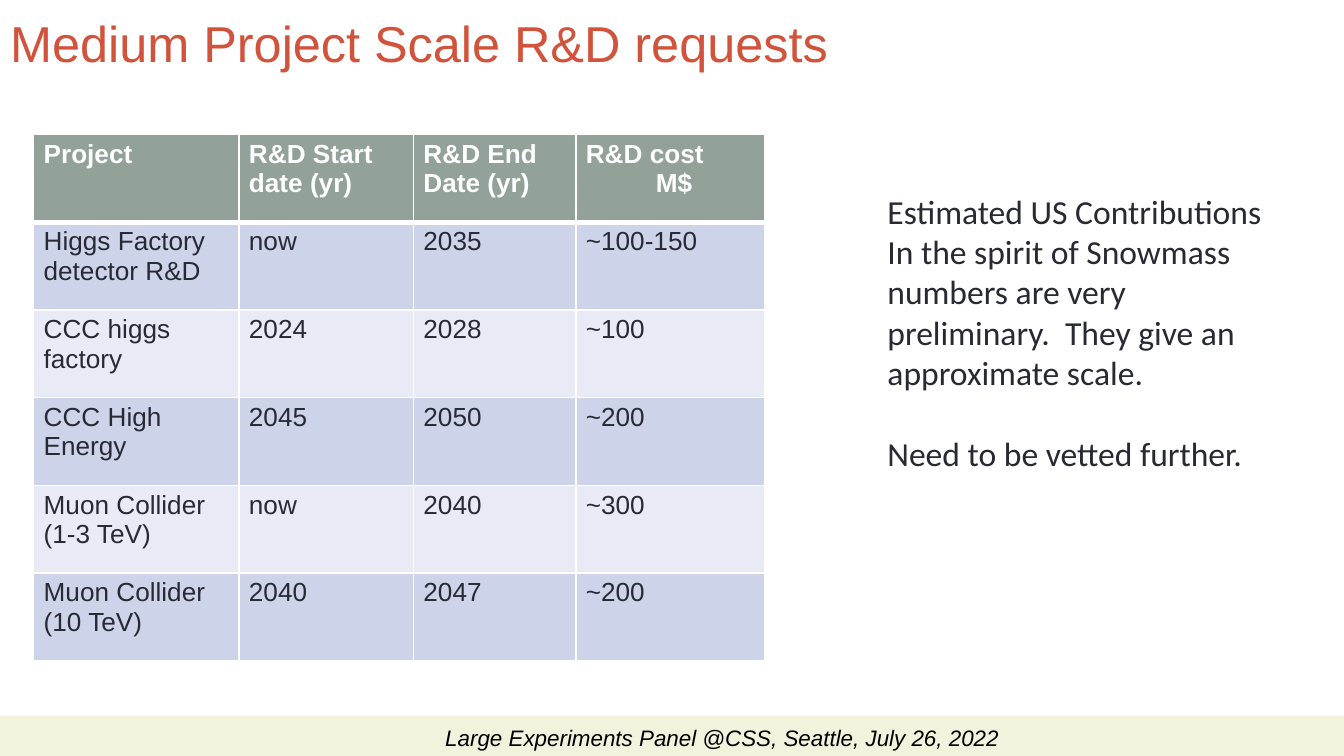
from pptx import Presentation
from pptx.dml.color import RGBColor
from pptx.enum.shapes import MSO_SHAPE
from pptx.enum.text import MSO_ANCHOR, MSO_AUTO_SIZE, PP_ALIGN
from pptx.oxml import parse_xml
from pptx.oxml.ns import nsdecls
from pptx.util import Pt

COLORS = {
    "title": "D2533C",
    "text": "292934",
    "white": "FFFFFF",
    "black": "000000",
    "header": "93A299",
    "band_dark": "CDD4EA",
    "band_light": "E8EBF5",
    "footer": "F3F2DC",
}
COLUMN_WIDTHS = [110, 93.5, 87, 101.5]
ROW_HEIGHT = 47
PROJECTS = [
    ["Project", "R&D Start date (yr)", "R&D End\nDate (yr)", "R&D cost\n M$"],
    ["Higgs Factory detector R&D", "now", "2035", "~100-150"],
    ["CCC higgs factory", "2024", "2028", "~100"],
    ["CCC High Energy", "2045", "2050", "~200"],
    ["Muon Collider\n(1-3 TeV)", "now", "2040", "~300"],
    ["Muon Collider\n(10 TeV)", "2040", "2047", "~200"],
]
NOTES = [
    "Estimated US Contributions",
    "In the spirit of Snowmass numbers are very preliminary.  "
    "They give an approximate scale.",
    "Need to be vetted further.",
]


def rgb(name):
    return RGBColor.from_string(COLORS[name])


class SlideBuilder:
    def __init__(self, s, font="Arial"):
        self.s = s
        self.font = font

    def set_text(self, tf, text, size, color, font=None, bold=False, italic=False,
                 align=PP_ALIGN.LEFT):
        tf.text = text
        for p in tf.paragraphs:
            p.alignment = align
            f = p.font
            f.name, f.size = font or self.font, Pt(size)
            f.bold, f.italic = bold, italic
            f.color.rgb = rgb(color)

    def set_margins(self, tf, x, y):
        tf.margin_left = tf.margin_right = Pt(x)
        tf.margin_top = tf.margin_bottom = Pt(y)

    def title(self, text, x, y, w, h):
        sp = self.s.shapes.title
        sp.left, sp.top, sp.width, sp.height = Pt(x), Pt(y), Pt(w), Pt(h)
        tf = sp.text_frame
        tf.auto_size = MSO_AUTO_SIZE.NONE
        tf.vertical_anchor = MSO_ANCHOR.MIDDLE
        self.set_margins(tf, 5.4, 2.7)
        self.set_text(tf, text, 27, "title")
        tf.paragraphs[0].line_spacing = 0.9

    def bar(self, x, y, w, h, color):
        sp = self.s.shapes.add_shape(MSO_SHAPE.RECTANGLE, Pt(x), Pt(y), Pt(w), Pt(h))
        sp.shadow.inherit = False
        sp.fill.solid()
        sp.fill.fore_color.rgb = rgb(color)
        sp.line.fill.background()

    def text(self, text, x, y, w, h, size, color, margins, **style):
        tf = self.s.shapes.add_textbox(Pt(x), Pt(y), Pt(w), Pt(h)).text_frame
        tf.word_wrap = True
        self.set_margins(tf, *margins)
        self.set_text(tf, text, size, color, **style)
        return tf

    def borders(self, cell, top, bottom):
        tc_pr = cell._tc.get_or_add_tcPr()
        for side, width in (("L", 1), ("R", 1), ("T", top), ("B", bottom)):
            tc_pr.append(parse_xml(
                f'<a:ln{side} {nsdecls("a")} w="{Pt(width)}"><a:solidFill>'
                f'<a:srgbClr val="{COLORS["white"]}"/></a:solidFill></a:ln{side}>'))

    def table(self, rows, x, y, widths, row_height):
        tbl = self.s.shapes.add_table(
            len(rows), len(widths), Pt(x), Pt(y),
            Pt(sum(widths)), Pt(row_height * len(rows))).table
        for column, width in zip(tbl.columns, widths):
            column.width = Pt(width)
        for i, row in enumerate(rows):
            tbl.rows[i].height = Pt(row_height)
            header = i == 0
            fill = "header" if header else "band_dark" if i % 2 else "band_light"
            for j, text in enumerate(row):
                cell = tbl.cell(i, j)
                self.set_margins(cell, 5.4, 2.7)
                self.borders(cell, top=3 if i == 1 else 1, bottom=3 if header else 1)
                cell.fill.solid()
                cell.fill.fore_color.rgb = rgb(fill)
                self.set_text(cell.text_frame, text, 14,
                              "white" if header else "text", bold=header)
        return tbl


def main():
    prs = Presentation()
    prs.slide_width, prs.slide_height = Pt(720), Pt(405)
    slide = SlideBuilder(prs.slides.add_slide(prs.slide_layouts[5]))

    slide.bar(0, 383.5, 720, 21.5, "footer")
    slide.text("Large Experiments Panel @CSS, Seattle, July 26, 2022",
               206.5, 384.5, 361, 21.5, 12, "black", (7.2, 3.6),
               italic=True, align=PP_ALIGN.CENTER)
    slide.title("Medium Project Scale R&D requests", 0, 10, 540, 29)

    tbl = slide.table(PROJECTS, 18, 72, COLUMN_WIDTHS, ROW_HEIGHT)
    tbl.cell(0, 3).text_frame.paragraphs[1].alignment = PP_ALIGN.CENTER

    tf = slide.text("\n".join(NOTES), 470, 99.5, 213, 224, 18, "text",
                    (5.4, 2.7), font="Calibri")
    tf.paragraphs[-1].space_before = Pt(22)

    prs.save("out.pptx")


if __name__ == "__main__":
    main()
